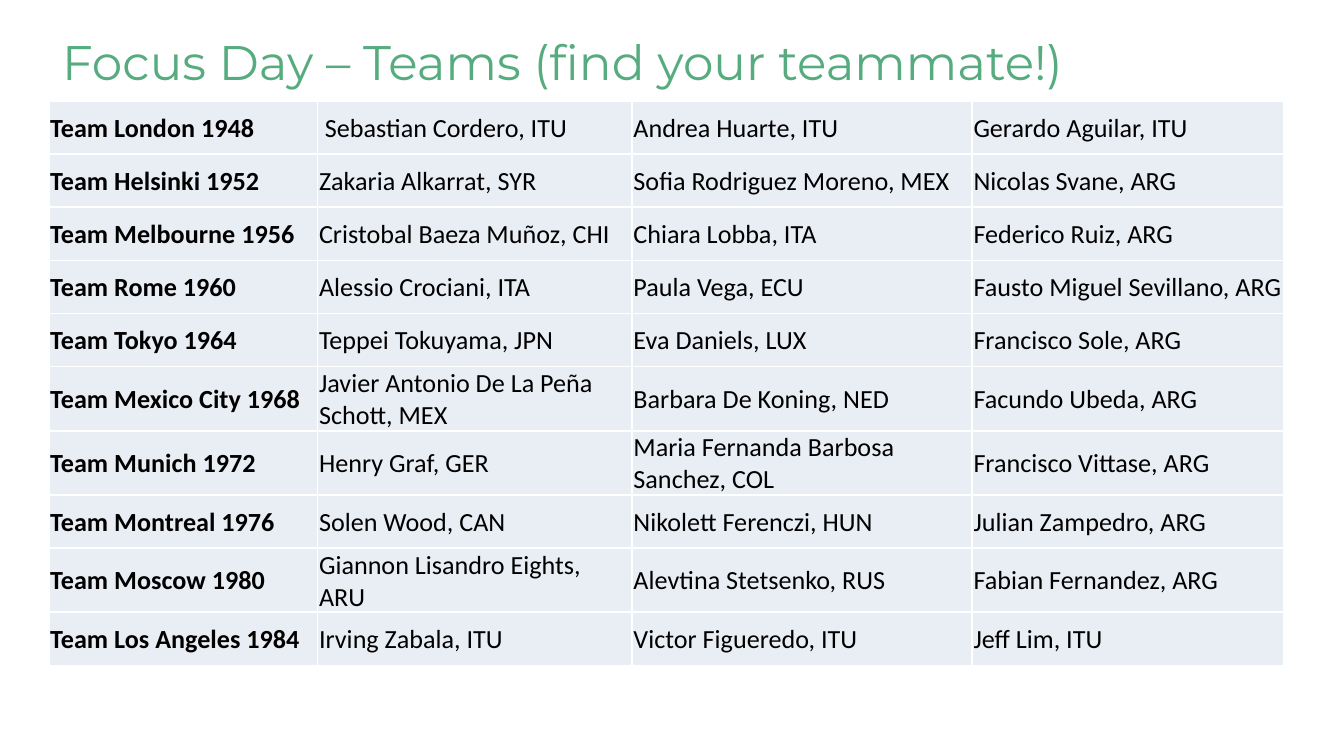
from lxml import etree
from pptx import Presentation, util as u
from pptx.dml.color import RGBColor
from pptx.enum import text
from pptx.oxml import ns

COLORS = {"title": "56AC7F", "ink": "000000", "cell": "E9EDF4", "rule": "FFFFFF"}
SLIDE_WIDTH = u.Inches(10)
SLIDE_HEIGHT = SLIDE_WIDTH * 9 // 16
COLUMN_INCHES = (2, 2.34, 2.53, 2.32)
ROW_HEIGHT = u.Pt(28.5)
TEAMS = [
    ("Team London 1948", " Sebastian Cordero, ITU", "Andrea Huarte, ITU", "Gerardo Aguilar, ITU"),
    ("Team Helsinki 1952", "Zakaria Alkarrat, SYR", "Sofia Rodriguez Moreno, MEX", "Nicolas Svane, ARG"),
    ("Team Melbourne 1956", "Cristobal Baeza Muñoz, CHI", "Chiara Lobba, ITA", "Federico Ruiz, ARG"),
    ("Team Rome 1960", "Alessio Crociani, ITA", "Paula Vega, ECU", "Fausto Miguel Sevillano, ARG"),
    ("Team Tokyo 1964", "Teppei Tokuyama, JPN", "Eva Daniels, LUX", "Francisco Sole, ARG"),
    ("Team Mexico City 1968", "Javier Antonio De La Peña Schott, MEX", "Barbara De Koning, NED",
     "Facundo Ubeda, ARG"),
    ("Team Munich 1972", "Henry Graf, GER", "Maria Fernanda Barbosa Sanchez, COL", "Francisco Vittase, ARG"),
    ("Team Montreal 1976", "Solen Wood, CAN", "Nikolett Ferenczi, HUN", "Julian Zampedro, ARG"),
    ("Team Moscow 1980", "Giannon Lisandro Eights, ARU", "Alevtina Stetsenko, RUS", "Fabian Fernandez, ARG"),
    ("Team Los Angeles 1984", "Irving Zabala, ITU", "Victor Figueredo, ITU", "Jeff Lim, ITU"),
]


def write(frame, wording, *, size, font, color, bold=False):
    """Write one formatted run into a text frame."""
    run = frame.paragraphs[0].add_run()
    run.text = wording
    run.font.size, run.font.name, run.font.bold = u.Pt(size), font, bold
    run.font.color.rgb = RGBColor.from_string(COLORS[color])


def rule_cell(cell):
    """Draw a thin rule on each side of a table cell."""
    properties = cell._tc.get_or_add_tcPr()
    for side in ("lnL", "lnR", "lnT", "lnB"):
        line = etree.SubElement(properties, ns.qn(f"a:{side}"), w=str(u.Pt(1)))
        fill = etree.SubElement(line, ns.qn("a:solidFill"))
        etree.SubElement(fill, ns.qn("a:srgbClr"), val=COLORS["rule"])


def add_title(slide, box):
    """Place the slide title in the given box."""
    frame = slide.shapes.add_textbox(*box).text_frame
    frame.word_wrap = True
    frame.auto_size = text.MSO_AUTO_SIZE.SHAPE_TO_FIT_TEXT
    write(frame, "Focus Day – Teams (find your teammate!)", size=26, font="Montserrat", color="title")


def fill_cell(cell, wording, bold):
    """Format one team cell and write its wording."""
    cell.margin_left = cell.margin_top = cell.margin_right = u.Inches(0.01)
    cell.margin_bottom = 0
    cell.vertical_anchor = text.MSO_ANCHOR.MIDDLE
    rule_cell(cell)
    cell.fill.solid()
    cell.fill.fore_color.rgb = RGBColor.from_string(COLORS["cell"])
    write(cell.text_frame, wording, size=14, font="Calibri", color="ink", bold=bold)


def add_teams(slide, box):
    """Place the table of teams and their members in the given box."""
    roster = slide.shapes.add_table(len(TEAMS), len(COLUMN_INCHES), *box).table
    roster.first_row = roster.horz_banding = False
    for column, share in zip(roster.columns, COLUMN_INCHES):
        column.width = round(box[2] * share / sum(COLUMN_INCHES))
    for row_index, team in enumerate(TEAMS):
        roster.rows[row_index].height = box[3] // len(TEAMS)
        for column_index, wording in enumerate(team):
            fill_cell(roster.cell(row_index, column_index), wording, bold=column_index == 0)


def main():
    """Build the teams slide and save it."""
    deck = Presentation()
    deck.slide_width, deck.slide_height = SLIDE_WIDTH, SLIDE_HEIGHT
    slide = deck.slides.add_slide(deck.slide_layouts[6])
    left, width = u.Pt(26.2), u.Inches(sum(COLUMN_INCHES))
    add_title(slide, (left, u.Inches(0.19), width, u.Inches(0.54)))
    add_teams(slide, (left, u.Inches(0.75), width, ROW_HEIGHT * len(TEAMS)))
    deck.save("out.pptx")


if __name__ == "__main__":
    main()
